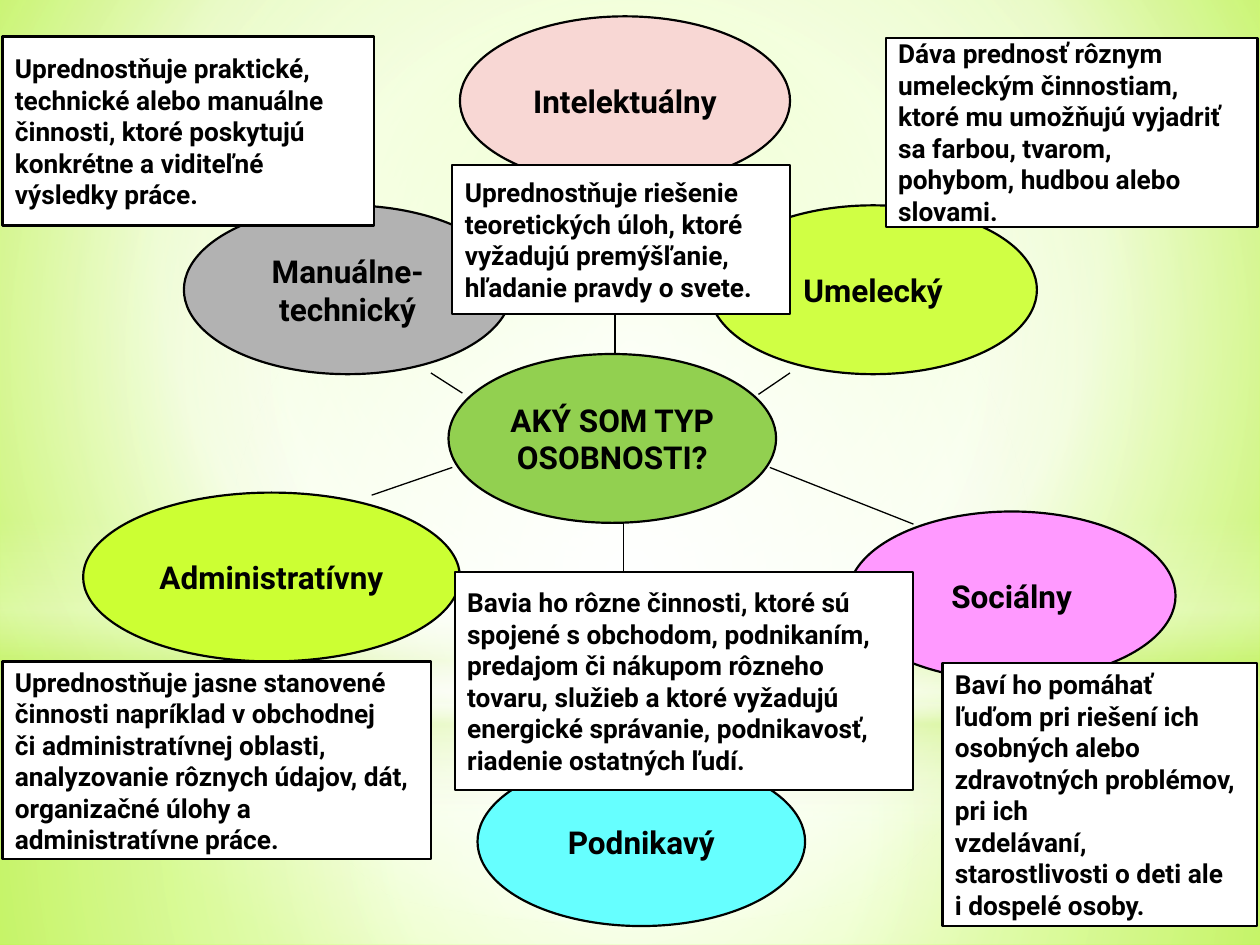
from lxml import etree
from pptx import Presentation
from pptx.dml.color import RGBColor
from pptx.enum.shapes import MSO_CONNECTOR, MSO_SHAPE
from pptx.enum.text import MSO_ANCHOR, PP_ALIGN
from pptx.oxml.ns import qn
from pptx.util import Inches, Pt

OVAL, RECT = MSO_SHAPE.OVAL, MSO_SHAPE.RECTANGLE
LINE = MSO_CONNECTOR.STRAIGHT
MID = MSO_ANCHOR.MIDDLE
LEFT, CENTER = PP_ALIGN.LEFT, PP_ALIGN.CENTER

BLACK = RGBColor(0x00, 0x00, 0x00)
WHITE = RGBColor(0xFF, 0xFF, 0xFF)
GREEN = RGBColor(0x92, 0xD0, 0x50)
CYAN = RGBColor(0x66, 0xFF, 0xFF)
LIME = RGBColor(0xCC, 0xFF, 0x33)
GRAY = RGBColor(0xB2, 0xB2, 0xB2)
YELLOW = RGBColor(0xD0, 0xFF, 0x44)
ROSE = RGBColor(0xF8, 0xD7, 0xD4)
PINK = RGBColor(0xFF, 0x99, 0xFF)
PALE = RGBColor(0xCA, 0xF2, 0x78)
SKY = RGBColor(0xCA, 0xFF, 0x60)
MIST = RGBColor(0xF7, 0xFF, 0xE7)
EDGE = RGBColor(0xB7, 0xFF, 0x29)

HALF = (50, 50, 50, 50)
GLOWS = [
    (RECT, (0, 5.58, 10, 1.92), HALF,
     [(0, WHITE, 91), (37, WHITE, 76), (100, PALE, 79)]),
    (RECT, (0, 0, 10, 5.58), HALF,
     [(0, WHITE, 89), (48, WHITE, 62), (100, PALE, 79)]),
    (RECT, (0, 4.12, 10, 2.5), None,
     [(0, WHITE, 0), (29, WHITE, 30), (45, PALE, 40),
      (55, WHITE, 26), (65, PALE, 60), (100, WHITE, 0)]),
    (OVAL, (0, 1.75, 10, 5.58), HALF,
     [(0, WHITE, 100), (56, WHITE, 0)]),
]
TYPES = [
    ("AKÝ SOM TYP\nOSOBNOSTI?", GREEN, (3.56, 2.81, 2.6, 1.34)),
    ("Podnikavý", CYAN, (3.79, 6.01, 2.6, 1.34)),
    ("Administratívny", LIME, (0.66, 3.91, 2.99, 1.34)),
    ("Manuálne-technický", GRAY, (1.46, 1.63, 2.6, 1.34)),
    ("Umelecký", YELLOW, (5.63, 1.63, 2.6, 1.34)),
    ("Intelektuálny", ROSE, (3.65, 0.13, 2.62, 1.34)),
    ("Sociálny", PINK, (6.73, 4.06, 2.6, 1.34)),
]
LINKS = [
    (3.42, 2.96, 3.67, 3.12),
    (2.95, 3.93, 3.59, 3.71),
    (6.11, 3.71, 7.25, 4.16),
    (4.95, 4.14, 4.95, 5.95),
    (4.88, 1.47, 4.88, 2.81),
    (6.02, 3.13, 6.27, 2.96),
]
NOTES = [
    ((3.59, 1.31, 2.68, 1.18),
     ["Uprednostňuje riešenie", "teoretických úloh, ktoré",
      "vyžadujú premýšľanie,", "hľadanie pravdy o svete."]),
    ((0.02, 0.29, 2.95, 1.5),
     ["Uprednostňuje praktické, technické alebo manuálne",
      "činnosti, ktoré poskytujú konkrétne a viditeľné výsledky práce."]),
    ((7.03, 0.3, 2.95, 1.5),
     ["Dáva prednosť rôznym umeleckým činnostiam, ktoré mu umožňujú "
      "vyjadriť sa farbou, tvarom,",
      "pohybom, hudbou alebo slovami."]),
    ((0.02, 5.25, 3.4, 1.57),
     ["Uprednostňuje jasne stanovené činnosti napríklad v obchodnej",
      "či administratívnej oblasti, analyzovanie rôznych údajov, dát, "
      "organizačné úlohy a administratívne práce."]),
    ((3.61, 4.54, 3.64, 1.73),
     ["Bavia ho rôzne činnosti, ktoré sú spojené s obchodom, podnikaním, "
      "predajom či nákupom rôzneho tovaru, služieb a ktoré vyžadujú "
      "energické správanie, podnikavosť, riadenie ostatných ľudí."]),
    ((7.48, 5.26, 2.5, 2.09),
     ["Baví ho pomáhať", "ľuďom pri riešení ich", "osobných alebo",
      "zdravotných problémov, pri ich", "vzdelávaní,",
      "starostlivosti o deti ale", "i dospelé osoby."]),
]


def blend(host, stops, focus):
    grad = etree.Element(qn("a:gradFill"), rotWithShape="1")
    row = etree.SubElement(grad, qn("a:gsLst"))
    for pos, color, alpha in stops:
        stop = etree.SubElement(row, qn("a:gs"), pos=str(pos * 1000))
        tint = etree.SubElement(stop, qn("a:srgbClr"), val=str(color))
        if alpha < 100:
            etree.SubElement(tint, qn("a:alpha"), val=str(alpha * 1000))
    if focus:
        ring = etree.SubElement(grad, qn("a:path"), path="circle")
        sides = {k: str(v * 1000) for k, v in zip("ltrb", focus)}
        etree.SubElement(ring, qn("a:fillToRect"), sides)
    else:
        etree.SubElement(grad, qn("a:lin"), ang="5400000", scaled="0")
    solid = host.find(qn("a:solidFill"))
    host.replace(solid, grad)


def add_form(slide, kind, box, color):
    form = slide.shapes.add_shape(kind, *map(Inches, box))
    form.shadow.inherit = False
    form.fill.solid()
    form.fill.fore_color.rgb = color
    return form


def draw_back(slide):
    fill = slide.background.fill
    fill.solid()
    fill.fore_color.rgb = WHITE
    base = slide.element.xpath(".//p:bgPr")[0]
    blend(base, [(0, SKY, 100), (60, MIST, 100), (100, EDGE, 100)],
          (20, 10, 20, 60))
    for kind, box, focus, stops in GLOWS:
        glow = add_form(slide, kind, box, WHITE)
        glow.line.fill.background()
        blend(glow.element.spPr, stops, focus)


def add_label(slide, kind, box, color, texts, size, align):
    form = add_form(slide, kind, box, color)
    form.line.color.rgb = BLACK
    form.line.width = Pt(1.25)
    frame = form.text_frame
    frame.word_wrap = True
    frame.vertical_anchor = MID
    look = {"name": "Roboto", "size": Pt(size), "bold": True}
    for i, text in enumerate(texts):
        para = frame.add_paragraph() if i else frame.paragraphs[0]
        para.text = text
        para.alignment = align
        for key, value in look.items():
            setattr(para.font, key, value)
        para.font.color.rgb = BLACK


def add_link(slide, ends):
    link = slide.shapes.add_connector(LINE, *map(Inches, ends))
    link.line.color.rgb = BLACK
    link.line.width = Pt(0.75)
    etree.SubElement(link.element.spPr, qn("a:effectLst"))


def main():
    deck = Presentation()
    deck.slide_width, deck.slide_height = Inches(10), Inches(7.5)
    slide = deck.slides.add_slide(deck.slide_layouts[6])
    draw_back(slide)
    for name, color, box in TYPES:
        add_label(slide, OVAL, box, color, [name], 18, CENTER)
    for ends in LINKS:
        add_link(slide, ends)
    for box, texts in NOTES:
        add_label(slide, RECT, box, WHITE, texts, 15, LEFT)
    deck.save("out.pptx")


if __name__ == "__main__":
    main()
